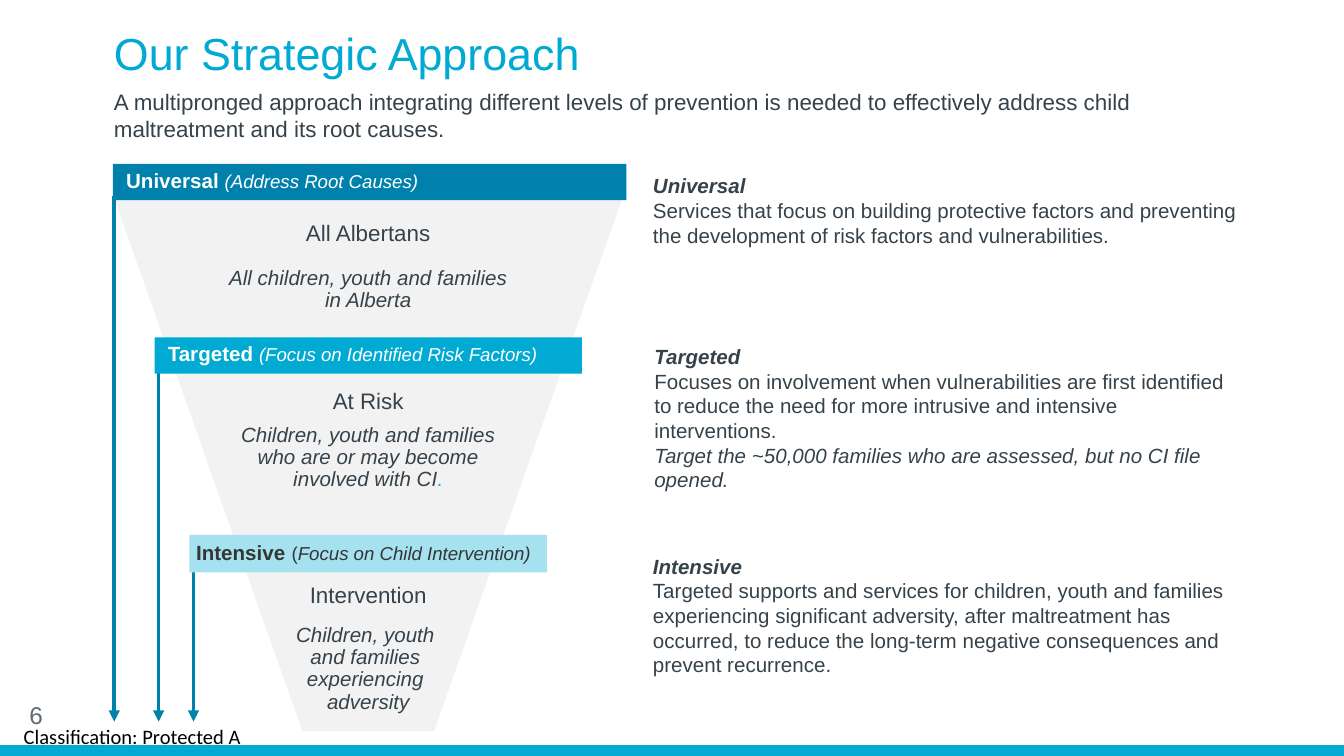
import pptx
import pptx.util
import pptx.dml.color
import pptx.enum.shapes
import pptx.enum.text
import pptx.oxml.ns
import lxml.etree

Inches, Pt = pptx.util.Inches, pptx.util.Pt
SHAPE = pptx.enum.shapes.MSO_SHAPE
ALIGN = pptx.enum.text.PP_ALIGN
ANCHOR = pptx.enum.text.MSO_ANCHOR

WIDTH = 10
HEIGHT = WIDTH * 9 / 16
AXIS = 2.74            # centre line of the funnel
ARROW_END = 5.37

THEME = {
    "font": "Arial", "footer_font": "Calibri",
    "title": 24, "number": 13, "lead": 12, "body": 11, "note": 10,
    "accent": "00AAD2", "deep": "0081AB", "pale": "A6E1EF", "funnel": "F2F2F2",
    "text": "36424A", "dark": "333635", "grey": "5F6A72", "dot": "1DB4DA",
    "white": "FFFFFF", "black": "000000",
}

BOLD, ITALIC = {"bold": True}, {"italic": True}
HEADING = {"bold": True, "italic": True}
NOTE = {"size": "note", "italic": True}

TITLE = "Our Strategic Approach"
LEAD = ("A multipronged approach integrating different levels of prevention is needed "
        "to effectively address child maltreatment and its root causes.")
FOOTER = "Classification: Protected A"
PAGE_NUMBER = "6"

# A paragraph is a list of (text, format) spans; places are left, top, width, height.
LEVELS = [
    {"bar": (0.84, 1.22, 3.82, 0.27), "fill": "deep", "ink": "white", "inset": 0.1,
     "label": [("Universal ", BOLD), ("(Address Root Causes)", NOTE)],
     "arrow": (0.85, 1.46),
     "group": "All Albertans", "group_at": (1.6, 2.32),
     "people": [[("All children, youth and families in Alberta", ITALIC)]],
     "people_at": (1.94, 2.38, 0.43),
     "meaning_at": (4.76, 1.24, 4.65, 0.66),
     "meaning": [
         [("Universal", HEADING)],
         [("Services that focus on building protective factors and preventing "
           "the development of risk factors and vulnerabilities.", {})]]},
    {"bar": (1.15, 2.51, 3.18, 0.27), "fill": "accent", "ink": "white", "inset": 0.1,
     "label": [("Targeted ", BOLD), ("(Focus on Identified Risk Factors)", NOTE)],
     "arrow": (1.18, 2.63),
     "group": "At Risk", "group_at": (2.85, 2.32),
     "people": [[("Children, youth and families who are or may become involved with CI", ITALIC),
                 (".", {"italic": True, "color": "dot"})]],
     "people_at": (3.11, 2.25, 0.6),
     "meaning_at": (4.77, 2.51, 4.48, 1.21),
     "meaning": [
         [("Targeted", HEADING)],
         [("Focuses on involvement when vulnerabilities are first identified to reduce "
           "the need for more intrusive and intensive interventions.", {})],
         [("Target the ~50,000 families who are assessed, but no CI file opened.", ITALIC)]]},
    {"bar": (1.41, 3.98, 2.66, 0.28), "fill": "pale", "ink": "dark", "inset": 0.05,
     "label": [("Intensive", BOLD), (" ", {"size": "lead"}), ("(", {"size": "note"}),
               ("Focus on Child Intervention)", NOTE)],
     "arrow": (1.44, 4.07),
     "group": "Intervention", "group_at": (4.3, 1.42),
     "people": [[(line, ITALIC)] for line in
                ("Children, youth ", "and families ", "experiencing ", "adversity")],
     "people_at": (4.6, 1.61, 0.77),
     "meaning_at": (4.76, 4.07, 4.65, 1.03),
     "meaning": [
         [("Intensive", HEADING)],
         [("Targeted supports and services for children, youth and families experiencing "
           "significant adversity, after maltreatment has occurred, to reduce the long-term "
           "negative consequences and prevent recurrence.", {})]]},
]

deck = pptx.Presentation()
deck.slide_width, deck.slide_height = Inches(WIDTH), Inches(HEIGHT)
page = deck.slides.add_slide(deck.slide_layouts[6])


def color(name):
    return pptx.dml.color.RGBColor.from_string(THEME[name])


def write(box, paragraphs, size="body", ink="text", font="font", align=ALIGN.LEFT,
          spacing=1.0, anchor=ANCHOR.TOP, inset=(0.1, 0.05)):
    """Fill a box with paragraphs; inset is (sides, top and bottom)."""
    side, edge = map(Inches, inset)
    frame = box.text_frame
    settings = {"word_wrap": True, "vertical_anchor": anchor, "margin_left": side,
                "margin_right": side, "margin_top": edge, "margin_bottom": edge}
    for name, value in settings.items():
        setattr(frame, name, value)
    for index, spans in enumerate(paragraphs):
        para = frame.add_paragraph() if index else frame.paragraphs[0]
        para.alignment, para.line_spacing = align, spacing
        for text, style in spans:
            span = para.add_run()
            span.text = text
            values = {"name": THEME[font], "size": Pt(THEME[style.get("size", size)]),
                      "bold": style.get("bold", False), "italic": style.get("italic", False)}
            for name, value in values.items():
                setattr(span.font, name, value)
            span.font.color.rgb = color(style.get("color", ink))


def add_text(place, paragraphs, **options):
    write(page.shapes.add_textbox(*map(Inches, place)), paragraphs, **options)


def add_block(kind, place, fill):
    block = page.shapes.add_shape(kind, *map(Inches, place))
    block.shadow.inherit = False
    block.fill.solid()
    block.fill.fore_color.rgb = color(fill)
    block.line.fill.background()
    return block


def add_arrow(left, top):
    arrow = page.shapes.add_connector(
        pptx.enum.shapes.MSO_CONNECTOR.STRAIGHT,
        Inches(left), Inches(top), Inches(left), Inches(ARROW_END))
    arrow.line.width = Pt(2)
    arrow.line.color.rgb = color("deep")
    qn = pptx.oxml.ns.qn
    lxml.etree.SubElement(arrow.line._get_or_add_ln(), qn("a:tailEnd"), type="triangle")
    lxml.etree.SubElement(arrow._element.spPr, qn("a:effectLst"))


def centred(top, width, height):
    return AXIS - width / 2, top, width, height


add_block(SHAPE.RECTANGLE, (0, HEIGHT - 0.08, WIDTH, 0.08), "accent")
add_text((0, 5.32, 1.97, 0.31), [[(FOOTER, {})]], ink="black", font="footer_font",
         align=ALIGN.CENTER, anchor=ANCHOR.MIDDLE, inset=(0, 0))
add_text((0.12, 5.17, 2.25, 0.3), [[(PAGE_NUMBER, {})]], size="number", ink="grey",
         anchor=ANCHOR.MIDDLE)
add_text((0.75, 0.14, 6.46, 0.62), [[(TITLE, {})]], size="title", ink="accent")
add_text((0.75, 0.61, 8.5, 0.5), [[(LEAD, {})]], size="lead")

funnel = add_block(SHAPE.TRAPEZOID, centred(1.49, 3.77, 3.95), "funnel")
funnel.adjustments[0] = 0.37
funnel._element.spPr.xfrm.set("flipV", "1")

for level in LEVELS:
    add_arrow(*level["arrow"])
    bar = add_block(SHAPE.RECTANGLE, level["bar"], level["fill"])
    write(bar, [level["label"]], ink=level["ink"], spacing=0.9, inset=(level["inset"], 0.05))
    add_text(centred(*level["group_at"], 0.28), [[(level["group"], {})]], size="lead",
             align=ALIGN.CENTER, spacing=0.9)
    add_text(centred(*level["people_at"]), level["people"], align=ALIGN.CENTER, spacing=0.9)
    add_text(level["meaning_at"], level["meaning"])

deck.save("out.pptx")
